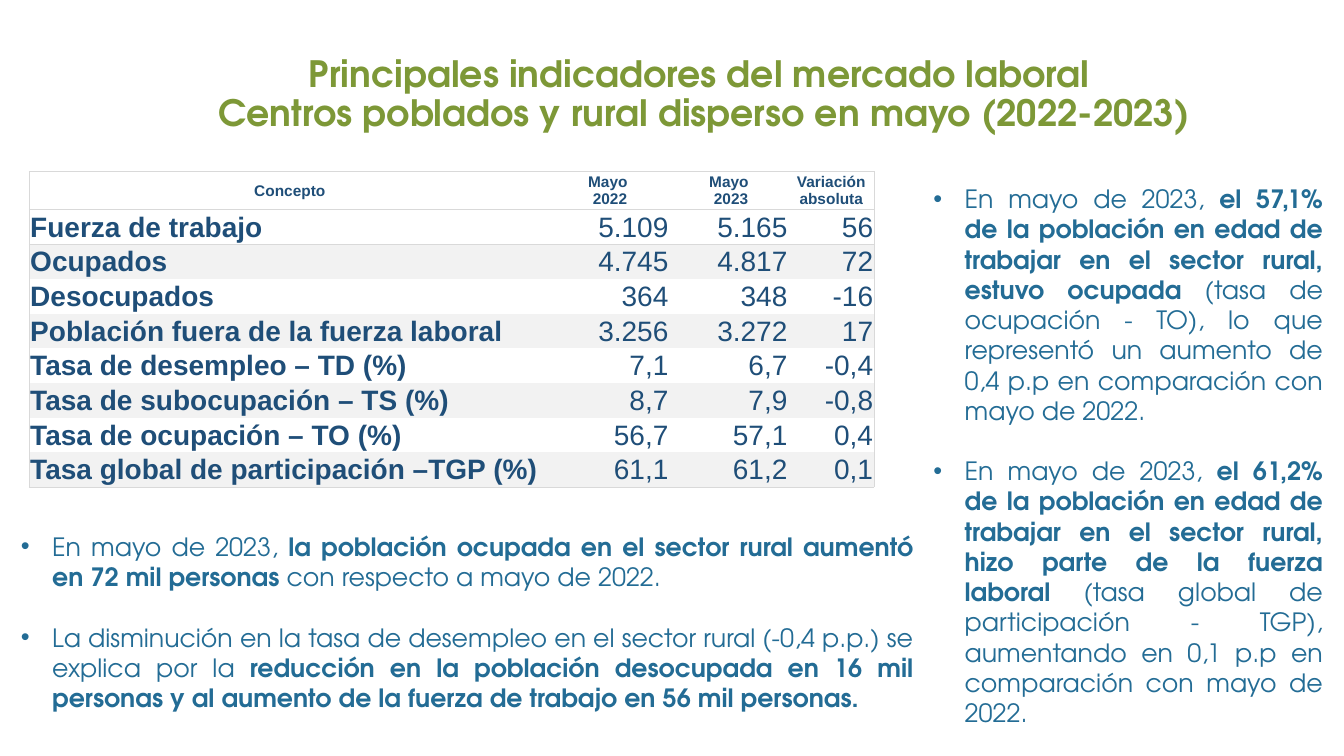
from dataclasses import dataclass

import pptx
import pptx.dml.color
import pptx.enum.text
import pptx.oxml
import pptx.oxml.ns
import pptx.util
from pptx.util import Inches

ALIGN = pptx.enum.text.PP_ALIGN
ANCHOR = pptx.enum.text.MSO_ANCHOR


@dataclass(frozen=True)
class Theme:
    green: str = "7D9837"
    teal: str = "236C95"
    navy: str = "1F4E78"
    white: str = "FFFFFF"
    band: str = "F2F2F2"
    line: str = "D9D9D9"
    body: str = "TeX Gyre Adventor"
    grid: str = "Arial"
    title: float = 25.9
    text: float = 18
    head: float = 11
    data: float = 20


THEME = Theme()

TITLE = ["Principales indicadores del mercado laboral ",
         "Centros poblados y rural disperso en mayo (2022-2023)"]

HEADS = ["Concepto", "Mayo \n2022", "Mayo\n 2023", "Variación absoluta"]
ROWS = [
    ["Fuerza de trabajo", "5.109", "5.165", "56"],
    ["Ocupados", "4.745", "4.817", "72"],
    ["Desocupados", "364", "348", "-16"],
    ["Población fuera de la fuerza laboral", "3.256", "3.272", "17"],
    ["Tasa de desempleo – TD (%)", "7,1", "6,7", "-0,4"],
    ["Tasa de subocupación – TS (%)", "8,7", "7,9", "-0,8"],
    ["Tasa de ocupación – TO (%)", "56,7", "57,1", "0,4"],
    ["Tasa global de participación –TGP (%)", "61,1", "61,2", "0,1"],
]

# Each point alternates plain and bold text, starting with plain.
BELOW = [
    ["En mayo de 2023, ",
     "la población ocupada en el sector rural aumentó en 72 mil personas ",
     "con respecto a mayo de 2022."],
    ["La disminución en la tasa de desempleo en el sector rural (-0,4 p.p.) "
     "se explica por la ",
     "reducción en la población desocupada en 16 mil personas y al aumento "
     "de la fuerza de trabajo en 56 mil personas."],
]
ASIDE = [
    ["En mayo de 2023, ",
     "el 57,1% de la población en edad de trabajar en el sector rural, "
     "estuvo ocupada ",
     "(tasa de ocupación - TO), lo que representó un aumento de 0,4 p.p "
     "en comparación con mayo de 2022."],
    ["En mayo de 2023, ",
     "el 61,2% de la población en edad de trabajar en el sector rural, "
     "hizo parte de la fuerza laboral ",
     "(tasa global de participación - TGP), aumentando en 0,1 p.p "
     "en comparación con mayo de 2022."],
]


def write(par, text, *, size, color, font=THEME.body, bold=False):
    run = par.add_run()
    run.text = text
    run.font.size = pptx.util.Pt(size)
    run.font.name = font
    run.font.bold = bold
    run.font.color.rgb = pptx.dml.color.RGBColor.from_string(color)


def lines(frame, count):
    """Yield the given number of paragraphs, the first being the present one."""
    for i in range(count):
        yield frame.add_paragraph() if i else frame.paragraphs[0]


def add_title(slide, box):
    shape = slide.shapes.title
    shape.left, shape.top, shape.width, shape.height = map(Inches, box)
    frame = shape.text_frame
    frame.auto_size = pptx.enum.text.MSO_AUTO_SIZE.NONE
    frame.vertical_anchor = ANCHOR.TOP
    for par, text in zip(lines(frame, len(TITLE)), TITLE):
        par.alignment = ALIGN.CENTER
        par.line_spacing = 0.9
        par.space_before = pptx.util.Pt(0)
        write(par, text, size=THEME.title, color=THEME.green, bold=True)


def add_points(slide, box, points):
    frame = slide.shapes.add_textbox(*map(Inches, box)).text_frame
    frame.word_wrap = True
    for i, par in enumerate(lines(frame, len(points))):
        props = par._p.get_or_add_pPr()
        props.set("marL", str(Inches(0.31)))
        props.set("indent", str(-Inches(0.31)))
        for tag, key, value in (("buFont", "typeface", THEME.grid),
                                ("buChar", "char", "•")):
            mark = pptx.oxml.ns.qn(f"a:{tag}")
            props.append(props.makeelement(mark, {key: value}))
        par.alignment = ALIGN.JUSTIFY
        if i:
            par.space_before = pptx.util.Pt(1.2 * THEME.text)
        for j, text in enumerate(points[i]):
            write(par, text, size=THEME.text, color=THEME.teal,
                  bold=j % 2 == 1)


def edge(cell, sides):
    """Draw the cell's borders on the named sides and clear the others."""
    props = cell._tc.get_or_add_tcPr()
    for side in "LRTB":
        fill = (f'<a:solidFill><a:srgbClr val="{THEME.line}"/></a:solidFill>'
                if side in sides else "<a:noFill/>")
        props.append(pptx.oxml.parse_xml(
            f'<a:ln{side} {pptx.oxml.ns.nsdecls("a")} '
            f'w="{pptx.util.Pt(0.5)}">{fill}</a:ln{side}>'))


def add_grid(slide, box):
    left, top, width, height = box
    rows = [HEADS] + ROWS
    table = slide.shapes.add_table(len(rows), len(HEADS),
                                   *map(Inches, box)).table
    table.first_row = table.horz_banding = False
    for col, size in zip(table.columns, (5.17, 1.18, 1.18, width - 7.53)):
        col.width = Inches(size)
    head = 0.38
    for i, row in enumerate(table.rows):
        row.height = Inches((height - head) / len(ROWS) if i else head)

    last = len(HEADS) - 1
    for i, values in enumerate(rows):
        for j, value in enumerate(values):
            cell = table.cell(i, j)
            sides = "L" * (j == 0) + "R" * (j == last)
            sides += "T" * (i < 3) + "B" * (i in (0, 1, len(ROWS)))
            edge(cell, sides)
            shade = THEME.band if i and i % 2 == 0 else THEME.white
            cell.fill.solid()
            cell.fill.fore_color.rgb = pptx.dml.color.RGBColor.from_string(
                shade)
            cell.margin_left = cell.margin_right = Inches(0.01)
            cell.margin_top, cell.margin_bottom = Inches(0.01), 0
            cell.vertical_anchor = ANCHOR.MIDDLE
            parts = value.split("\n")
            for par, text in zip(lines(cell.text_frame, len(parts)), parts):
                par.alignment = (ALIGN.CENTER if i == 0 else
                                 ALIGN.RIGHT if j else ALIGN.LEFT)
                write(par, text, size=THEME.data if i else THEME.head,
                      color=THEME.navy, font=THEME.grid,
                      bold=i == 0 or j == 0)


def main():
    deck = pptx.Presentation()
    deck.slide_width, deck.slide_height = Inches(13.33), Inches(7.5)
    slide = deck.slides.add_slide(deck.slide_layouts[5])
    add_title(slide, (2.03, 0.51, 9.91, 1.19))
    add_points(slide, (0.11, 5.22, 9.05, 1.92), BELOW)
    add_grid(slide, (0.29, 1.7, 8.38, 3.13))
    add_points(slide, (9.16, 1.77, 4.06, 5.25), ASIDE)
    deck.save("out.pptx")


if __name__ == "__main__":
    main()
